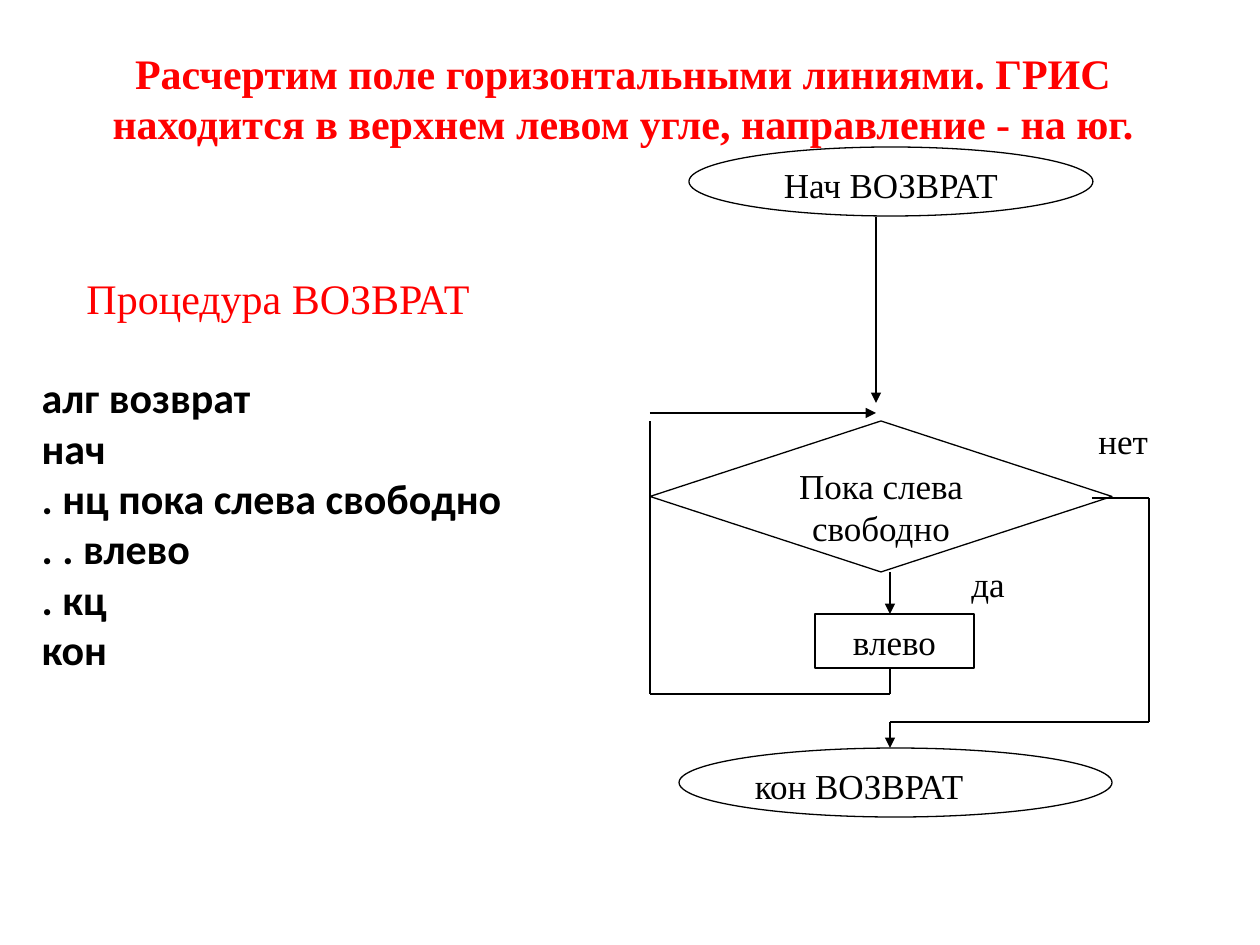
"""Build a slide with a procedure listing and its flowchart."""
from pptx import Presentation
from pptx import util as u
from pptx.dml.color import RGBColor
from pptx.enum import shapes, text
from pptx.oxml.ns import qn
from lxml import etree

PX = u.Inches(1) / 126
COLORS = {"accent": "FF0000", "ink": "000000", "paper": "FFFFFF"}
SERIF, SANS = "Times New Roman", "Calibri"
CENTER, LEFT = text.PP_ALIGN.CENTER, text.PP_ALIGN.LEFT


def px(length):
    """Turn whole pixels into EMU."""
    return u.Emu(round(length * PX))


def color(name):
    """Look up a named colour."""
    return RGBColor.from_string(COLORS[name])


def write(para, words, size=20, font=SERIF, ink="ink", bold=False, align=CENTER, before=0, after=0):
    """Write formatted words into a paragraph without a bullet."""
    props = para._p.get_or_add_pPr()
    props.set("marL", "0")
    props.set("indent", "0")
    etree.SubElement(props, qn("a:buNone"))
    para.alignment = align
    para.space_before, para.space_after = u.Pt(before), u.Pt(after)
    span = para.add_run()
    span.text = words
    span.font.size, span.font.name, span.font.bold = u.Pt(size), font, bold
    span.font.color.rgb = color(ink)


def place(holder, box):
    """Move a placeholder into a box and return its text frame."""
    holder.left, holder.top, holder.width, holder.height = map(px, box)
    frame = holder.text_frame
    frame.word_wrap = True
    frame.auto_size = text.MSO_AUTO_SIZE.NONE
    return frame


def add_title(page, box):
    """Fill the title region."""
    frame = place(page.shapes.title, box)
    frame.vertical_anchor = text.MSO_ANCHOR.MIDDLE
    write(frame.paragraphs[0],
          "Расчертим поле горизонтальными линиями. ГРИС находится в верхнем левом угле, направление - на юг.",
          size=24, ink="accent", bold=True)


def add_algorithm(page, box):
    """Fill the body region with the procedure heading and listing."""
    frame = place(page.placeholders[1], box)
    frame.vertical_anchor = text.MSO_ANCHOR.TOP
    write(frame.paragraphs[0], "Процедура ВОЗВРАТ", size=24, ink="accent")
    steps = ["алг возврат", "нач", ". нц пока слева свободно", ". . влево", ". кц", "кон"]
    for index, step in enumerate(steps):
        write(frame.add_paragraph(), step, size=24, font=SANS, bold=True,
              align=LEFT, before=0 if index else 28)


def add_node(chart, kind, box, words, line="ink", align=CENTER):
    """Add one labelled flowchart shape."""
    node = chart.add_shape(kind, *map(px, box))
    node.shadow.inherit = False
    node.fill.solid()
    node.fill.fore_color.rgb = color("paper")
    node.line.color.rgb = color(line)
    node.line.width = u.Pt(0.75)
    frame = node.text_frame
    frame.word_wrap = True
    frame.vertical_anchor = text.MSO_ANCHOR.TOP
    write(frame.paragraphs[0], words, align=align, after=10)


def add_route(chart, points, arrow=False):
    """Join points with straight lines, the last one optionally an arrow."""
    for index, (start, end) in enumerate(zip(points, points[1:]), 1):
        line = chart.add_connector(shapes.MSO_CONNECTOR.STRAIGHT, *map(px, start + end))
        line.line.color.rgb = color("ink")
        line.line.width = u.Pt(0.75)
        if arrow and index == len(points) - 1:
            etree.SubElement(line.line._get_or_add_ln(), qn("a:tailEnd"), type="triangle")
        etree.SubElement(line._element.spPr, qn("a:effectLst"))


def add_flowchart(page, left, top):
    """Draw the loop flowchart from its top left corner."""
    chart = page.shapes.add_group_shape().shapes
    kinds = shapes.MSO_SHAPE
    nodes = [
        (kinds.OVAL, (39, 0, 404, 69), "Нач ВОЗВРАТ", "ink", CENTER),
        (kinds.FLOWCHART_PROCESS, (165, 467, 159, 54), "влево", "ink", CENTER),
        (kinds.FLOWCHART_DECISION, (0, 274, 462, 151), "Пока слева свободно", "ink", CENTER),
        (kinds.OVAL, (29, 601, 433, 69), "кон ВОЗВРАТ", "ink", LEFT),
        (kinds.RECTANGLE, (309, 409, 96, 48), "да", "paper", LEFT),
        (kinds.RECTANGLE, (436, 266, 96, 48), "нет", "paper", LEFT),
    ]
    for kind, (x, y, width, height), words, line, align in nodes:
        add_node(chart, kind, (left + x, top + y, width, height), words, line, align)
    entry, axis, exit_side = 226, 240, 499
    routes = [
        ([(entry, 70), (entry, 256)], True),
        ([(axis, 425), (axis, 467)], True),
        ([(axis, 521), (axis, 547), (0, 547), (0, 274)], False),
        ([(0, 266), (entry, 266)], True),
        ([(442, 351), (exit_side, 351), (exit_side, 575), (axis, 575), (axis, 601)], True),
    ]
    for points, arrow in routes:
        add_route(chart, [(left + x, top + y) for x, y in points], arrow)


def main():
    """Build and save the deck."""
    deck = Presentation()
    deck.slide_width, deck.slide_height = px(1260), px(945)
    page = deck.slides.add_slide(deck.slide_layouts[1])
    add_title(page, (63, 38, 1120, 120))
    add_algorithm(page, (29, 266, 498, 674))
    add_flowchart(page, 650, 147)
    deck.save("out.pptx")


if __name__ == "__main__":
    main()
